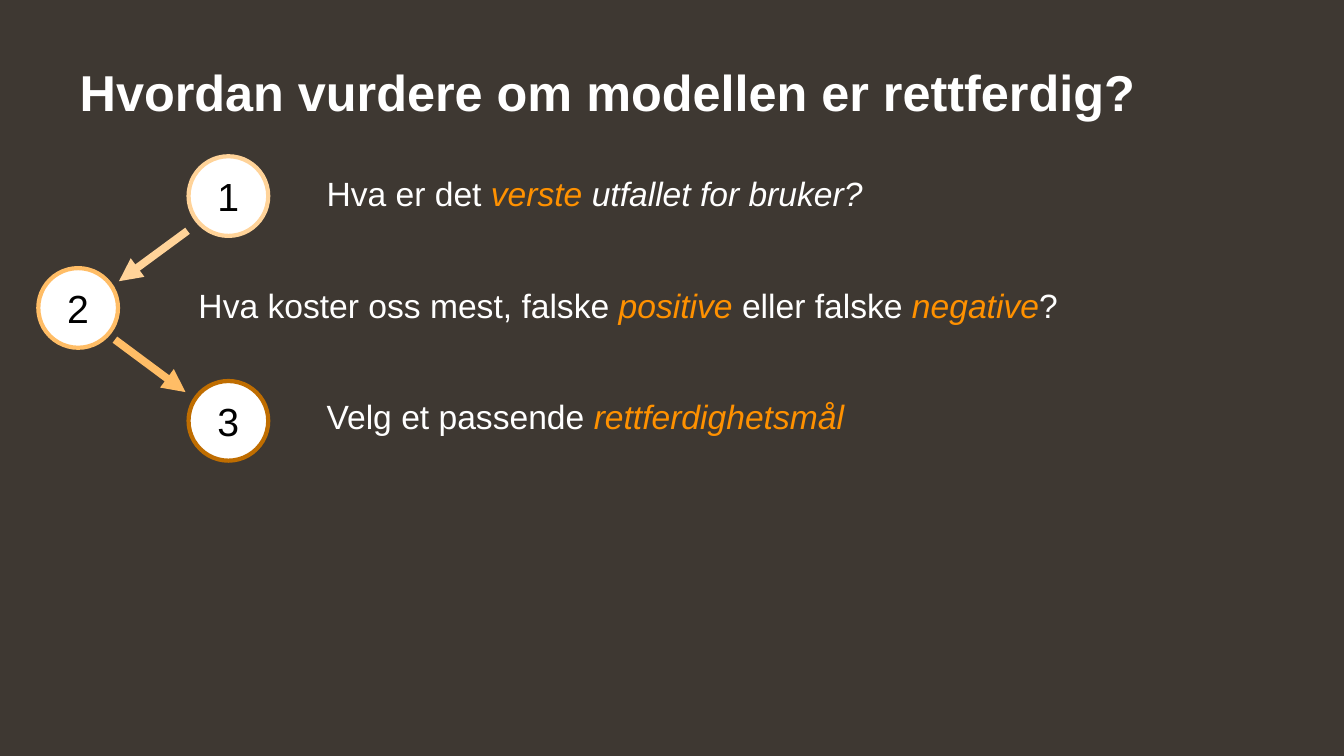
from lxml.etree import SubElement
from pptx import Presentation
from pptx.dml.color import RGBColor
from pptx.enum.shapes import MSO_CONNECTOR, MSO_SHAPE
from pptx.enum.text import MSO_ANCHOR, MSO_AUTO_SIZE, PP_ALIGN
from pptx.oxml.ns import qn
from pptx.util import Inches, Pt

COLORS = {"background": "3E3832", "white": "FFFFFF", "black": "000000",
          "accent": "FF9100", "light": "FFD399", "medium": "FFBD66", "dark": "BF6D00"}
TITLE = "Hvordan vurdere om modellen er rettferdig?"

# Each run: text, color, italic
STEPS = [
    {"circle": (1.87, 1.55), "ring": "light", "text": (3.14, 1.67), "spacing": 1.0, "before": 0,
     "runs": [("Hva er det ", "white", False), ("verste ", "accent", True),
              ("utfallet for bruker?", "white", True)]},
    {"circle": (0.38, 2.66), "ring": "medium", "text": (1.87, 2.82), "spacing": 0.9, "before": 10,
     "runs": [("Hva koster oss mest, falske ", "white", False), ("positive", "accent", True),
              (" eller falske ", "white", False), ("negative", "accent", True),
              ("?", "white", False)]},
    {"circle": (1.87, 3.78), "ring": "dark", "text": (3.14, 3.92), "spacing": 0.9, "before": 10,
     "runs": [("Velg et passende ", "white", False), ("rettferdighetsmål", "accent", True)]},
]
ARROWS = [((1.86, 2.29), (1.18, 2.79), "light"), ((1.14, 3.37), (1.84, 3.89), "medium")]
DIAMETER = 0.79
TEXT_SIZE = (10.19, 0.5)


def rgb(name):
    return RGBColor.from_string(COLORS[name])


def add_run(p, text, size, color, bold=False, italic=False):
    r = p.add_run()
    r.text = text
    r.font.name = "Arial"
    r.font.size = Pt(size)
    r.font.color.rgb = rgb(color)
    r.font.bold = bold
    r.font.italic = italic


def add_title(s):
    title = s.shapes.title
    title.left, title.top = Inches(0.69), Inches(0.22)
    title.width, title.height = Inches(11.5), Inches(1.45)
    tf = title.text_frame
    tf.auto_size = MSO_AUTO_SIZE.NONE
    tf.vertical_anchor = MSO_ANCHOR.MIDDLE
    p = tf.paragraphs[0]
    p.alignment = PP_ALIGN.LEFT
    p.line_spacing = 0.9
    add_run(p, TITLE, 36, "white", bold=True)


def add_circle(s, number, step):
    x, y = step["circle"]
    sp = s.shapes.add_shape(MSO_SHAPE.OVAL, Inches(x), Inches(y),
                            Inches(DIAMETER), Inches(DIAMETER))
    sp.shadow.inherit = False
    sp.fill.solid()
    sp.fill.fore_color.rgb = rgb("white")
    sp.line.color.rgb = rgb(step["ring"])
    sp.line.width = Pt(3)
    tf = sp.text_frame
    tf.vertical_anchor = MSO_ANCHOR.MIDDLE
    p = tf.paragraphs[0]
    p.alignment = PP_ALIGN.CENTER
    add_run(p, str(number), 28, "black")


def add_question(s, step):
    x, y = step["text"]
    width, height = TEXT_SIZE
    sp = s.shapes.add_textbox(Inches(x), Inches(y), Inches(width), Inches(height))
    tf = sp.text_frame
    tf.word_wrap = True
    p = tf.paragraphs[0]
    p.line_spacing = step["spacing"]
    p.space_before = Pt(step["before"])
    for text, color, italic in step["runs"]:
        add_run(p, text, 24, color, italic=italic)


def add_arrow(s, start, end, color):
    sp = s.shapes.add_connector(MSO_CONNECTOR.STRAIGHT,
                                *(Inches(v) for v in start + end))
    sp.line.color.rgb = rgb(color)
    sp.line.width = Pt(5.5)
    SubElement(sp.line._get_or_add_ln(), qn("a:tailEnd"), type="triangle")
    SubElement(sp._element.spPr, qn("a:effectLst"))


def main():
    prs = Presentation()
    prs.slide_width, prs.slide_height = Inches(13.33), Inches(7.5)
    s = prs.slides.add_slide(prs.slide_layouts[5])
    s.background.fill.solid()
    s.background.fill.fore_color.rgb = rgb("background")
    add_title(s)
    for number, step in enumerate(STEPS, start=1):
        add_circle(s, number, step)
        add_question(s, step)
    for start, end, color in ARROWS:
        add_arrow(s, start, end, color)
    prs.save("out.pptx")


if __name__ == "__main__":
    main()
